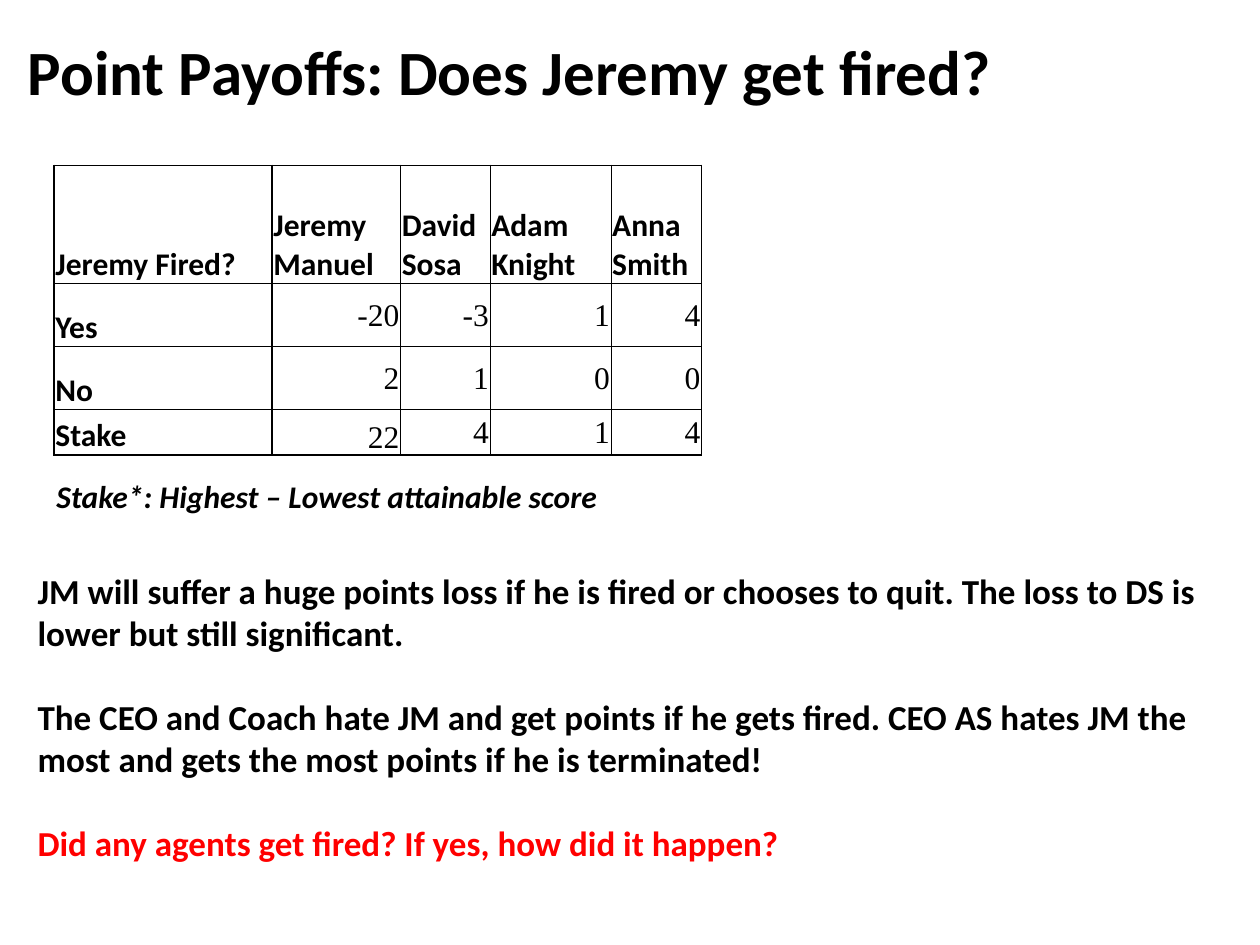
from lxml.etree import SubElement as Sub
from pptx import Presentation as Deck
from pptx.dml.color import RGBColor as Rgb
from pptx.enum.text import MSO_ANCHOR as Anchor, PP_ALIGN as Align
from pptx.oxml.ns import qn
from pptx.util import Inches as Inch, Pt

WIDE, HIGH = 10, 7.5
INK = {"text": "000000", "alert": "FF0000"}
HEAD = ["Jeremy Fired?", "Jeremy Manuel", "David Sosa", "Adam Knight", "Anna Smith"]
SCORES = [("Yes", -20, -3, 1, 4), ("No", 2, 1, 0, 0), ("Stake", 22, 4, 1, 4)]
COLS = [1.73, 1.02, 0.71, 0.96, 0.72]
ROWS = [0.94, 0.5, 0.5, 0.36]


def style(para, size, face="Calibri", bold=True, ink="text", slant=False):
    font = para.font
    font.name, font.size, font.bold, font.italic = face, Pt(size), bold, slant
    font.color.rgb = Rgb.from_string(INK[ink])


def add_box(slide, box, foot=0.05):
    left, top, wide, high = box
    shape = slide.shapes.add_textbox(
        Inch(left * WIDE), Inch(top * HIGH), Inch(wide * WIDE), Inch(high * HIGH))
    frame = shape.text_frame
    frame.word_wrap = True
    frame.vertical_anchor = Anchor.MIDDLE
    frame.margin_bottom = Inch(foot)
    return frame


def add_title(slide, box):
    para = add_box(slide, box, 0.66).paragraphs[0]
    para.text = "Point Payoffs: Does Jeremy get fired? "
    para.alignment = Align.CENTER
    style(para, 36)


def add_note(slide, box):
    para = add_box(slide, box).paragraphs[0]
    para.text = "Stake*: Highest – Lowest attainable score"
    style(para, 18, slant=True)


def add_body(slide, box):
    frame = add_box(slide, box, 0.38)
    points = [
        ("JM will suffer a huge points loss if he is fired or chooses to quit. "
         "The loss to DS is lower but still significant.", "text"),
        ("The CEO and Coach hate JM and get points if he gets fired. "
         "CEO AS hates JM the most and gets the most points if he is terminated!", "text"),
        ("Did any agents get fired? If yes, how did it happen?", "alert"),
    ]
    for num, (text, ink) in enumerate(points):
        para = frame.add_paragraph() if num else frame.paragraphs[0]
        para.text = text
        para.space_before = Pt(24 if num else 0)
        style(para, 20, ink=ink)


def rule_cell(cell, row, col):
    end, low = len(COLS) - 1, len(ROWS) - 1
    thick = {"L": col < 2, "R": col in (0, end), "T": row == 0, "B": row == low}
    props = cell._tc.get_or_add_tcPr()
    for side, bold in thick.items():
        line = Sub(props, qn(f"a:ln{side}"), w=str(Pt(1 if bold else 0.5)))
        fill = Sub(line, qn("a:solidFill"))
        Sub(fill, qn("a:srgbClr"), val=INK["text"])


def fill_cell(cell, text, row, col):
    label = row == 0 or col == 0
    cell.margin_left = cell.margin_right = cell.margin_top = Inch(0.01)
    cell.margin_bottom = 0
    low = label or (row, col) == (len(ROWS) - 1, 1)
    cell.vertical_anchor = Anchor.BOTTOM if low else Anchor.MIDDLE
    rule_cell(cell, row, col)
    cell.fill.background()
    cell.text = str(text)
    para = cell.text_frame.paragraphs[0]
    para.alignment = Align.LEFT if label else Align.RIGHT
    style(para, 18, "Calibri" if label else "Times New Roman", label)


def add_scores(slide, left, top):
    table = slide.shapes.add_table(
        len(ROWS), len(COLS), Inch(left * WIDE), Inch(top * HIGH),
        Inch(sum(COLS)), Inch(sum(ROWS))).table
    table.first_row = table.horz_banding = False
    for col, wide in enumerate(COLS):
        table.columns[col].width = Inch(wide)
    for row, texts in enumerate([HEAD, *SCORES]):
        table.rows[row].height = Inch(ROWS[row])
        for col, text in enumerate(texts):
            fill_cell(table.cell(row, col), text, row, col)


def main():
    deck = Deck()
    deck.slide_width, deck.slide_height = Inch(WIDE), Inch(HIGH)
    slide = deck.slides.add_slide(deck.slide_layouts[6])
    add_title(slide, (-0.04, 0.03, 0.9, 0.17))
    add_scores(slide, 0.043, 0.175)
    add_body(slide, (0.02, 0.515, 0.99, 0.53))
    add_note(slide, (0.035, 0.44, 0.51, 0.17))
    deck.save("out.pptx")


if __name__ == "__main__":
    main()
